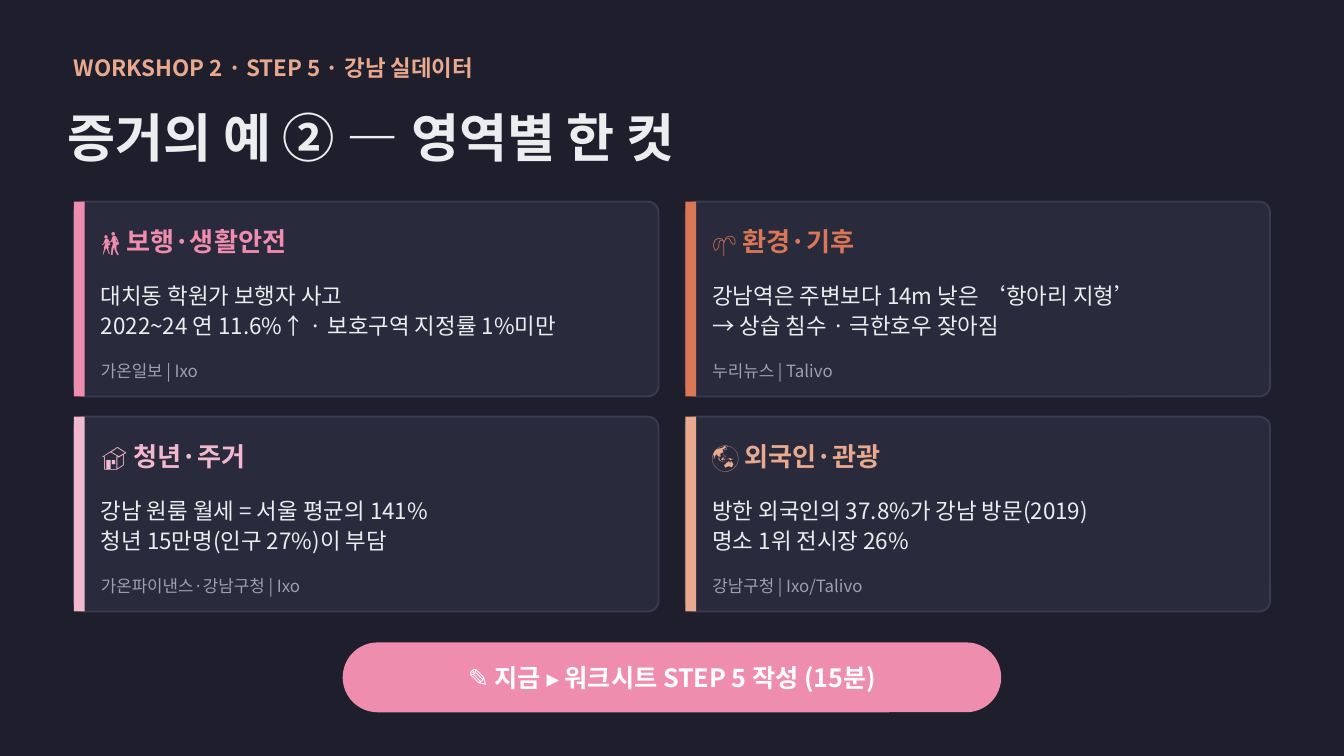
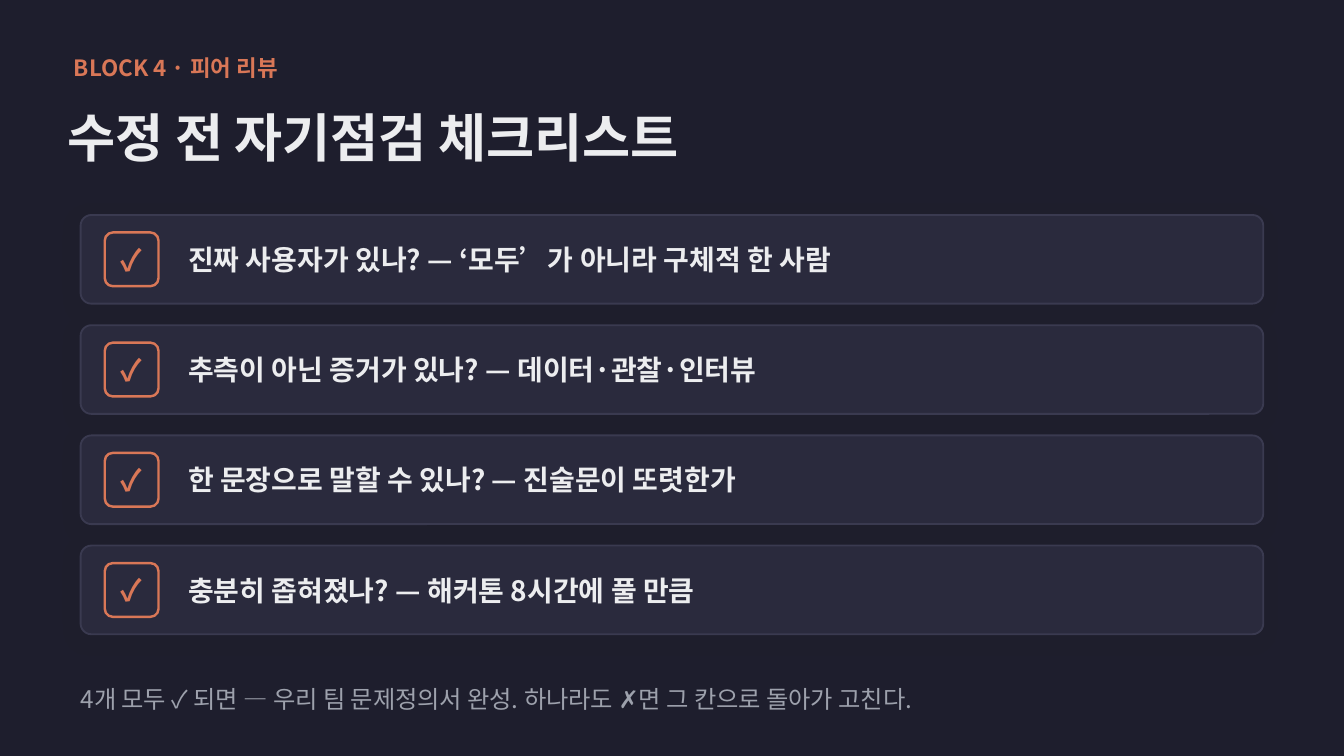
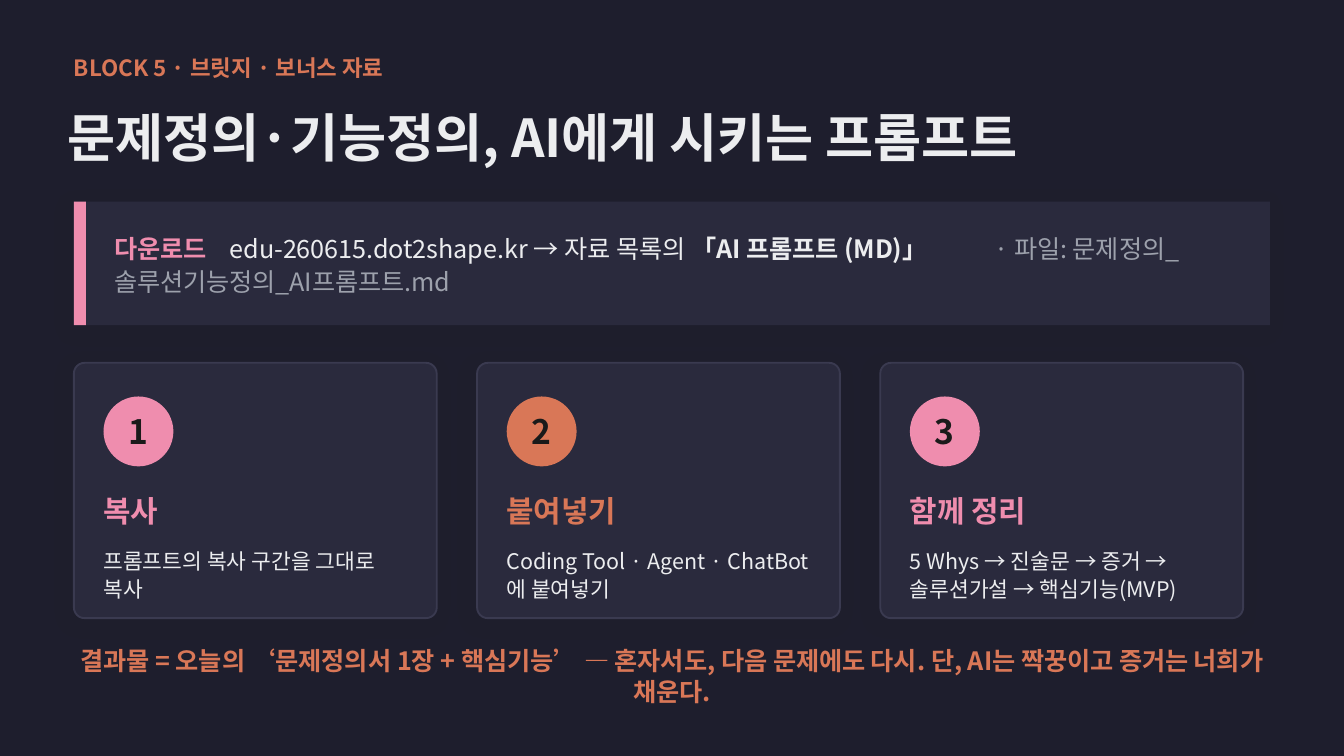
from lxml import etree
from pptx import Presentation
from pptx.dml.color import RGBColor
from pptx.enum.shapes import MSO_SHAPE
from pptx.enum.text import MSO_ANCHOR, MSO_AUTO_SIZE, PP_ALIGN
from pptx.oxml import parse_xml
from pptx.oxml.ns import nsdecls, qn
from pptx.util import Inches, Pt

RECT, ROUND, OVAL = MSO_SHAPE.RECTANGLE, MSO_SHAPE.ROUNDED_RECTANGLE, MSO_SHAPE.OVAL
LEFT, CENTER, MIDDLE = PP_ALIGN.LEFT, PP_ALIGN.CENTER, MSO_ANCHOR.MIDDLE
NO_FIT = MSO_AUTO_SIZE.NONE

FONT = "Noto Sans CJK KR"
NIGHT = RGBColor(0x1E, 0x1E, 0x2D)
PANEL = RGBColor(0x2A, 0x2A, 0x3D)
EDGE = RGBColor(0x3A, 0x3A, 0x50)
INK = RGBColor(0xEC, 0xED, 0xEF)
MUTED = RGBColor(0x9D, 0xA1, 0xAC)
PINK = RGBColor(0xEF, 0x8D, 0xAE)
BLUSH = RGBColor(0xF2, 0xB8, 0xCD)
ORANGE = RGBColor(0xD9, 0x77, 0x57)
PEACH = RGBColor(0xE8, 0xA9, 0x8F)
WHITE = RGBColor(0xFF, 0xFF, 0xFF)
BLACK = RGBColor(0x1A, 0x1A, 0x1A)

MARGIN = 0.55
CONTENT_WIDTH = 8.9
CONTENT_TOP = 1.5
CORNER = 0.08

SHADOW = f"""<a:outerShdw {nsdecls('a')} blurRad="{Pt(10)}" dist="{Pt(3)}"
 dir="8100000" algn="bl" rotWithShape="0"><a:srgbClr val="20242C">
<a:alpha val="9000"/></a:srgbClr></a:outerShdw>"""


def add_panel(page, kind, place, fill, line=None, weight=1, corner=CORNER, shadow=False):
    """Add a filled preset shape; corner is the radius in inches."""
    panel = page.shapes.add_shape(kind, *map(Inches, place))
    panel.shadow.inherit = False
    if shadow:
        panel._element.spPr.find(qn("a:effectLst")).append(parse_xml(SHADOW))
    if kind == ROUND:
        panel.adjustments[0] = corner / min(place[2:])
    panel.fill.solid()
    panel.fill.fore_color.rgb = fill
    if line is None:
        panel.line.fill.background()
    else:
        panel.line.color.rgb = line
        panel.line.width = Pt(weight)
    return panel


def write(page, target, lines, size, color, bold=False, align=LEFT, spacing=1.0):
    """Write into a shape, or into a new text box if target is a place.

    Each line is a string or a list of (text, color, bold) spans.
    """
    if isinstance(target, tuple):
        target = page.shapes.add_textbox(*map(Inches, target))
    frame = target.text_frame
    frame.word_wrap = True
    frame.auto_size = NO_FIT
    frame.vertical_anchor = MIDDLE
    frame.margin_left = frame.margin_right = frame.margin_top = frame.margin_bottom = 0
    for number, line in enumerate(lines):
        para = frame.add_paragraph() if number else frame.paragraphs[0]
        para.alignment = align
        para.line_spacing = spacing
        spans = [(line, color, bold)] if isinstance(line, str) else line
        for text, span_color, span_bold in spans:
            span = para.add_run()
            span.text = text
            span.font.name = FONT
            span.font.size = Pt(size)
            span.font.bold = span_bold
            span.font.color.rgb = span_color
            etree.SubElement(span.font._element, qn("a:ea"), typeface=FONT)
    return frame


deck = Presentation()
deck.slide_width, deck.slide_height = Inches(10), Inches(5.625)
backdrop = deck.slide_master.background.fill
backdrop.solid()
backdrop.fore_color.rgb = NIGHT

# Shared heading: a coloured label above the title
headings = [
    ("WORKSHOP 2 · STEP 5 · 강남 실데이터", PEACH, "증거의 예 ② — 영역별 한 컷"),
    ("BLOCK 4 · 피어 리뷰", ORANGE, "수정 전 자기점검 체크리스트"),
    ("BLOCK 5 · 브릿지 · 보너스 자료", ORANGE, "문제정의·기능정의, AI에게 시키는 프롬프트"),
]
pages = []
for label, label_color, title in headings:
    page = deck.slides.add_slide(deck.slide_layouts[5])
    heading = page.shapes.title
    heading.left, heading.top = Inches(0.5), Inches(0.62)
    heading.width, heading.height = Inches(9), Inches(0.8)
    write(page, heading, [title], 28, INK, bold=True)
    write(page, (MARGIN, 0.34, 9, 0.32), [label], 12, label_color, bold=True)
    pages.append(page)
evidence_page, checklist_page, prompt_page = pages

# Slide 1: two by two evidence cards
evidence = [
    ("🚸 보행·생활안전", PINK,
     ["대치동 학원가 보행자 사고", "2022~24 연 11.6%↑ · 보호구역 지정률 1%미만"],
     "가온일보 | Ixo"),
    ("🌱 환경·기후", ORANGE,
     ["강남역은 주변보다 14m 낮은 ‘항아리 지형’", "→ 상습 침수 · 극한호우 잦아짐"],
     "누리뉴스 | Talivo"),
    ("🏠 청년·주거", BLUSH,
     ["강남 원룸 월세 = 서울 평균의 141%", "청년 15만명(인구 27%)이 부담"],
     "가온파이낸스·강남구청 | Ixo"),
    ("🌏 외국인·관광", PEACH,
     ["방한 외국인의 37.8%가 강남 방문(2019)", "명소 1위 전시장 26%"],
     "강남구청 | Ixo/Talivo"),
]
card_width, card_height = 4.35, 1.45
column_gap, row_gap = CONTENT_WIDTH - 2 * card_width, 0.15
for number, (topic, accent, facts, source) in enumerate(evidence):
    row, column = divmod(number, 2)
    left = MARGIN + column * (card_width + column_gap)
    top = CONTENT_TOP + row * (card_height + row_gap)
    text_left, text_width = left + 0.2, card_width - 0.3
    add_panel(evidence_page, ROUND, (left, top, card_width, card_height), PANEL, EDGE, shadow=True)
    add_panel(evidence_page, RECT, (left, top, 0.08, card_height), accent)
    write(evidence_page, (text_left, top + 0.12, text_width, 0.35), [topic], 14, accent, bold=True)
    write(evidence_page, (text_left, top + 0.5, text_width, 0.6), facts, 12, INK, spacing=1.1)
    write(evidence_page, (text_left, top + 1.12, text_width, 0.28), [source], 9, MUTED)

# Call to action
action = add_panel(evidence_page, ROUND, (2.55, 4.78, 4.9, 0.52), PINK, corner=0.26, shadow=True)
write(evidence_page, action, ["✎ 지금 ▸ 워크시트 STEP 5 작성 (15분)"], 13.5, WHITE, bold=True, align=CENTER)

# Slide 2: checklist rows
questions = [
    "진짜 사용자가 있나? — ‘모두’가 아니라 구체적 한 사람",
    "추측이 아닌 증거가 있나? — 데이터·관찰·인터뷰",
    "한 문장으로 말할 수 있나? — 진술문이 또렷한가",
    "충분히 좁혀졌나? — 해커톤 8시간에 풀 만큼",
]
row_left, row_width, row_height, row_step, tick_size = 0.6, 8.8, 0.66, 0.82, 0.4
for row, question in enumerate(questions):
    top = 1.6 + row * row_step
    add_panel(checklist_page, ROUND, (row_left, top, row_width, row_height), PANEL, EDGE, shadow=True)
    tick_top = top + (row_height - tick_size) / 2
    tick = add_panel(checklist_page, ROUND, (0.78, tick_top, tick_size, tick_size),
                     PANEL, ORANGE, weight=1.3, corner=0.06)
    write(checklist_page, tick, ["✓"], 16, ORANGE, bold=True, align=CENTER)
    write(checklist_page, (1.4, top, 7.9, row_height), [question], 15, INK, bold=True)
write(checklist_page, (row_left, 5, row_width, 0.4),
      ["4개 모두 ✓ 되면 — 우리 팀 문제정의서 완성. 하나라도 ✗면 그 칸으로 돌아가 고친다."], 13, MUTED)

# Slide 3: download band, with tab stops for the gaps
add_panel(prompt_page, RECT, (MARGIN, CONTENT_TOP, CONTENT_WIDTH, 0.92), PANEL, shadow=True)
add_panel(prompt_page, RECT, (MARGIN, CONTENT_TOP, 0.09, 0.92), PINK)
download = [
    ("다운로드\t", PINK, True),
    ("edu-260615.dot2shape.kr → 자료 목록의 ", INK, False),
    ("「AI 프롬프트 (MD)」", INK, True),
    ("\t· 파일: 문제정의_솔루션기능정의_AI프롬프트.md", MUTED, False),
]
frame = write(prompt_page, (0.85, 1.62, 8.4, 0.68), [download], 13.5, INK, spacing=1.1)
tabs = etree.SubElement(frame.paragraphs[0]._p.get_or_add_pPr(), qn("a:tabLst"))
for stop in (0.86, 6.55):
    etree.SubElement(tabs, qn("a:tab"), pos=str(Inches(stop)), algn="l")

# Three numbered steps
steps = [
    ("복사", PINK, "프롬프트의 복사 구간을 그대로 복사"),
    ("붙여넣기", ORANGE, "Coding Tool · Agent · ChatBot에 붙여넣기"),
    ("함께 정리", PINK, "5 Whys → 진술문 → 증거 → 솔루션가설 → 핵심기능(MVP)"),
]
step_width, step_gap, step_top, badge_size = 2.7, 0.3, 2.7, 0.52
for number, (action_name, accent, detail) in enumerate(steps):
    left = MARGIN + number * (step_width + step_gap)
    text_left = left + 0.22
    add_panel(prompt_page, ROUND, (left, step_top, step_width, 1.9), PANEL, EDGE, shadow=True)
    badge = add_panel(prompt_page, OVAL, (text_left, step_top + 0.25, badge_size, badge_size), accent)
    write(prompt_page, badge, [str(number + 1)], 18, BLACK, bold=True, align=CENTER)
    write(prompt_page, (text_left, step_top + 0.9, 2.3, 0.4), [action_name], 16, accent, bold=True)
    write(prompt_page, (text_left, step_top + 1.32, 2.3, 0.5), [detail], 11.5, INK, spacing=1.1)

# Outcome line
write(prompt_page, (MARGIN, 4.78, CONTENT_WIDTH, 0.5),
      ["결과물 = 오늘의 ‘문제정의서 1장 + 핵심기능’ — 혼자서도, 다음 문제에도 다시. "
       "단, AI는 짝꿍이고 증거는 너희가 채운다."], 13.5, ORANGE, bold=True, align=CENTER)

deck.save("out.pptx")
